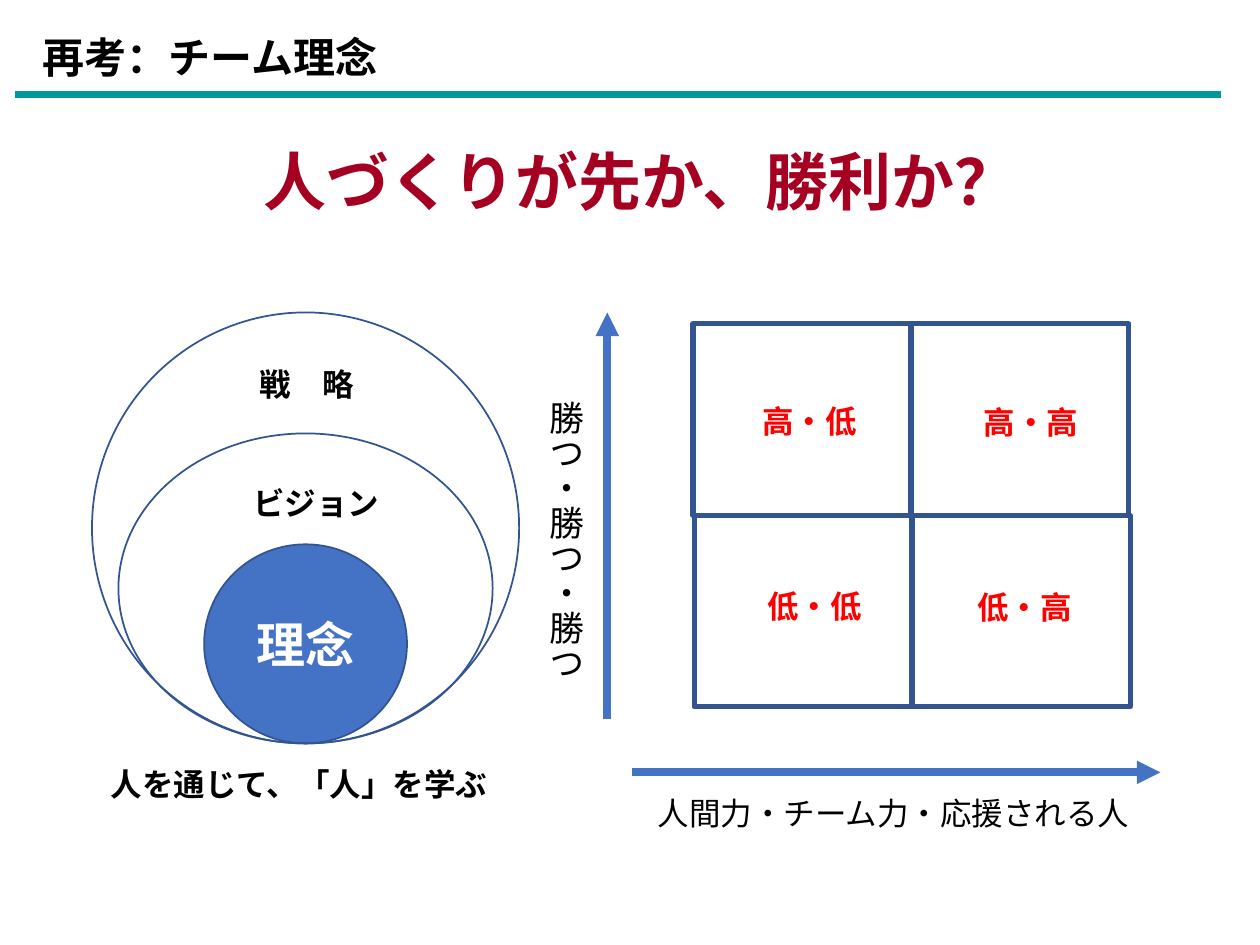
from dataclasses import dataclass

from lxml.etree import SubElement
from pptx import Presentation
from pptx.dml.color import RGBColor
from pptx.enum.shapes import MSO_CONNECTOR, MSO_SHAPE
from pptx.enum.text import MSO_ANCHOR, MSO_AUTO_SIZE, PP_ALIGN
from pptx.oxml.ns import qn
from pptx.shapes.autoshape import Shape
from pptx.slide import Slide
from pptx.util import Inches, Pt


@dataclass(frozen=True)
class Theme:
    black: str = "000000"
    white: str = "FFFFFF"
    blue: str = "4472C4"
    outline: str = "325491"
    teal: str = "009999"
    crimson: str = "A50021"
    red: str = "FF0000"
    font: str = "Noto Sans CJK JP"
    core_font: str = "Calibri"
    body: int = 18
    axis: int = 20
    header: int = 24
    core: int = 28
    headline: int = 36
    thin: float = 1
    frame: float = 3
    heavy: float = 4.5


THEME = Theme()

# The slide is a grid of 100 columns by 75 rows
COLUMNS, ROWS = 100, 75
SLIDE_WIDTH, SLIDE_HEIGHT = Inches(10), Inches(7.5)


@dataclass(frozen=True)
class Box:
    left: float
    top: float
    width: float
    height: float

    def emu(self) -> tuple[int, int, int, int]:
        return (col(self.left), row(self.top), col(self.width), row(self.height))


@dataclass(frozen=True)
class Label:
    text: str
    box: Box
    size: int = THEME.body
    color: str = THEME.black
    bold: bool = True
    wrap: bool = False
    vertical: bool = False


@dataclass(frozen=True)
class Outline:
    kind: MSO_SHAPE
    box: Box
    weight: float
    fill: str | None = None


@dataclass(frozen=True)
class Rule:
    start: tuple[float, float]
    end: tuple[float, float]
    color: str = THEME.blue
    arrow: bool = True


def col(count: float) -> int:
    return round(SLIDE_WIDTH * count / COLUMNS)


def row(count: float) -> int:
    return round(SLIDE_HEIGHT * count / ROWS)


def write_text(shape: Shape, text: str, size: int, color: str, bold: bool, font: str) -> None:
    run = shape.text_frame.paragraphs[0].add_run()
    run.text = text
    for name, value in {"name": font, "size": Pt(size), "bold": bold}.items():
        setattr(run.font, name, value)
    run.font.color.rgb = RGBColor.from_string(color)
    SubElement(run.font._element, qn("a:ea")).set("typeface", THEME.font)


def draw_label(slide: Slide, label: Label) -> None:
    shape = slide.shapes.add_textbox(*label.box.emu())
    frame_format = {"word_wrap": label.wrap, "auto_size": MSO_AUTO_SIZE.SHAPE_TO_FIT_TEXT}
    for name, value in frame_format.items():
        setattr(shape.text_frame, name, value)
    if label.vertical:
        shape.text_frame._txBody.bodyPr.set("vert", "eaVert")
    write_text(shape, label.text, label.size, label.color, label.bold, THEME.font)


def draw_outline(slide: Slide, outline: Outline) -> Shape:
    shape = slide.shapes.add_shape(outline.kind, *outline.box.emu())
    shape.shadow.inherit = False
    if outline.fill:
        shape.fill.solid()
        shape.fill.fore_color.rgb = RGBColor.from_string(outline.fill)
    else:
        shape.fill.background()
    shape.line.color.rgb = RGBColor.from_string(THEME.outline)
    shape.line.width = Pt(outline.weight)
    return shape


def draw_rule(slide: Slide, rule: Rule) -> None:
    (x1, y1), (x2, y2) = rule.start, rule.end
    line = slide.shapes.add_connector(
        MSO_CONNECTOR.STRAIGHT, col(x1), row(y1), col(x2), row(y2))
    line.line.color.rgb = RGBColor.from_string(rule.color)
    line.line.width = Pt(THEME.heavy)
    properties = line._element.spPr
    if rule.arrow:
        SubElement(properties.find(qn("a:ln")), qn("a:tailEnd")).set("type", "triangle")
    SubElement(properties, qn("a:effectLst"))


# Nested circles: core, vision, strategy
CORE = Outline(MSO_SHAPE.OVAL, Box(16.2, 43.2, 16.1, 15.8), THEME.thin, THEME.blue)
RINGS = [
    Outline(MSO_SHAPE.OVAL, Box(9.4, 34.4, 29.7, 24.6), THEME.thin),
    Outline(MSO_SHAPE.OVAL, Box(7.3, 24.8, 33.9, 34.2), THEME.thin),
]
RING_LABELS = [
    Label("ビジョン", Box(19.1, 37.9, 12.1, 4)),
    Label("戦　略", Box(19.6, 28.5, 9.6, 4)),
    Label("人を通じて、「人」を学ぶ", Box(7.8, 60.2, 33.4, 4), wrap=True),
]

# Two-by-two matrix, its lower row set slightly to the right
CELL_WIDTH, CELL_HEIGHT, ROW_SHIFT = 17.3, 15.2, 0.1
QUADRANTS = [
    Outline(MSO_SHAPE.RECTANGLE,
            Box(55 + c * CELL_WIDTH + r * ROW_SHIFT, 25.7 + r * CELL_HEIGHT,
                CELL_WIDTH, CELL_HEIGHT),
            THEME.frame, THEME.white)
    for r in range(2) for c in range(2)
]
QUADRANT_LABELS = [
    Label(text, Box(left, top, 9.6, 4), color=THEME.red)
    for text, left, top in [
        ("高・高", 77.1, 31.5), ("高・低", 59.5, 31.4),
        ("低・低", 59.9, 46.1), ("低・高", 76.6, 46.2),
    ]
]

# Matrix axes
AXES = [Rule((48.2, 57.1), (48.2, 24.8)), Rule((50.2, 61.3), (92.1, 61.3))]
AXIS_LABELS = [
    Label("人間力・チーム力・応援される人", Box(51.2, 62.5, 39.9, 4), bold=False),
    Label("勝つ・勝つ・勝つ", Box(41.7, 30.8, 5.4, 23.4), THEME.axis,
          bold=False, vertical=True),
]

# Header and headline
HEADER = Label("再考：チーム理念", Box(2.4, 2, 79.4, 5), THEME.header, wrap=True)
HEADER_RULE = Rule((1.2, 7.5), (96.9, 7.5), THEME.teal, arrow=False)
HEADLINE = Label("人づくりが先か、勝利か？", Box(19.9, 10.8, 62.6, 7.1),
                 THEME.headline, THEME.crimson)


def main() -> None:
    deck = Presentation()
    deck.slide_width, deck.slide_height = SLIDE_WIDTH, SLIDE_HEIGHT
    slide = deck.slides.add_slide(deck.slide_layouts[6])

    core = draw_outline(slide, CORE)
    core.text_frame.vertical_anchor = MSO_ANCHOR.MIDDLE
    core.text_frame.paragraphs[0].alignment = PP_ALIGN.CENTER
    write_text(core, "理念", THEME.core, THEME.white, True, THEME.core_font)

    for outline in RINGS + QUADRANTS:
        draw_outline(slide, outline)
    for rule in [*AXES, HEADER_RULE]:
        draw_rule(slide, rule)
    for label in [*RING_LABELS, *AXIS_LABELS, *QUADRANT_LABELS, HEADER, HEADLINE]:
        draw_label(slide, label)

    deck.save("out.pptx")


if __name__ == "__main__":
    main()
